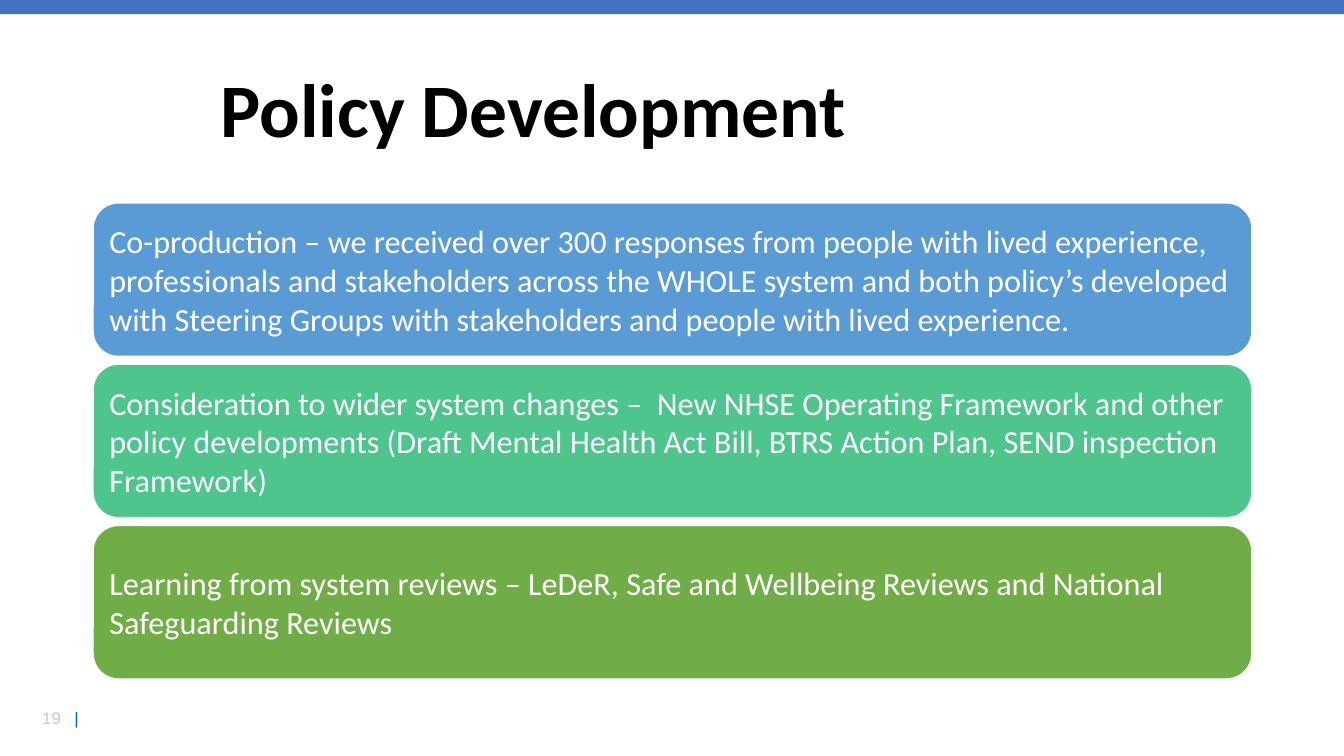
from lxml import etree
from pptx import Presentation
from pptx.dml.color import RGBColor
from pptx.enum.shapes import MSO_SHAPE as Shape
from pptx.enum.text import MSO_ANCHOR as Anchor, PP_ALIGN as Align
from pptx.oxml.ns import qn
from pptx.util import Inches, Pt

BLACK = RGBColor(0x00, 0x00, 0x00)
WHITE = RGBColor(0xFF, 0xFF, 0xFF)
GREY = RGBColor(0xC9, 0xC9, 0xC9)
DARK_BLUE = RGBColor(0x00, 0x5E, 0xB8)
BAR_BLUE = RGBColor(0x44, 0x72, 0xC4)
BLUE = RGBColor(0x5B, 0x9B, 0xD5)
TEAL = RGBColor(0x4D, 0xC5, 0x8D)
GREEN = RGBColor(0x70, 0xAD, 0x47)

SLIDE_WIDTH = 13.33
CARD_TOP, CARD_HEIGHT, CARD_STEP = 2.01, 1.53, 1.6

CARDS = [
    (BLUE, "Co-production – we received over 300 responses from people with lived "
           "experience, professionals and stakeholders across the WHOLE system and both "
           "policy’s developed with Steering Groups with stakeholders and people with "
           "lived experience."),
    (TEAL, "Consideration to wider system changes –  New NHSE Operating Framework and "
           "other policy developments (Draft Mental Health Act Bill, BTRS Action Plan, "
           "SEND inspection Framework)"),
    (GREEN, "Learning from system reviews – LeDeR, Safe and Wellbeing Reviews and "
            "National Safeguarding Reviews"),
]


def add_run(paragraph, text, size, color, font="Calibri", bold=False):
    run = paragraph.add_run()
    run.text = text
    run.font.name = font
    run.font.size = Pt(size)
    run.font.bold = bold
    run.font.color.rgb = color


def add_block(slide, kind, left, top, width, height, fill):
    shape = slide.shapes.add_shape(
        kind, Inches(left), Inches(top), Inches(width), Inches(height))
    shape.shadow.inherit = False
    shape.fill.solid()
    shape.fill.fore_color.rgb = fill
    return shape


def add_title(slide, text):
    title = slide.shapes.title
    title.left, title.top = Inches(2.09), Inches(0.4)
    title.width, title.height = Inches(10.32), Inches(1.45)
    title.text_frame.vertical_anchor = Anchor.MIDDLE
    paragraph = title.text_frame.paragraphs[0]
    paragraph.alignment = Align.LEFT
    paragraph.line_spacing = 0.9
    add_run(paragraph, text, 54, BLACK, bold=True)


def add_card(slide, top, fill, text):
    card = add_block(slide, Shape.ROUNDED_RECTANGLE, 0.92, top, 11.5, CARD_HEIGHT, fill)
    card.line.color.rgb = WHITE
    card.line.width = Pt(1.5)
    frame = card.text_frame
    frame.word_wrap = True
    frame.vertical_anchor = Anchor.MIDDLE
    frame.margin_left = frame.margin_right = Inches(0.09)
    frame.margin_top = frame.margin_bottom = Inches(0.09)
    paragraph = frame.paragraphs[0]
    paragraph.alignment = Align.LEFT
    add_run(paragraph, text, 23, WHITE)


def add_page_number(slide, number):
    """Page number with a vertical bar set off by a tab stop."""
    box = slide.shapes.add_textbox(Inches(0.32), Inches(6.97), Inches(0.71), Inches(0.3))
    box.text_frame.word_wrap = True
    paragraph = box.text_frame.paragraphs[0]
    properties = paragraph._p.get_or_add_pPr()
    tabs = etree.SubElement(properties, qn("a:tabLst"))
    etree.SubElement(tabs, qn("a:tab"), pos=str(Inches(0.32)), algn="l")
    add_run(paragraph, f"{number}\t", 12, GREY, "Arial")
    add_run(paragraph, "|", 12, DARK_BLUE, "Arial")


def main():
    presentation = Presentation()
    presentation.slide_width = Inches(SLIDE_WIDTH)
    presentation.slide_height = Inches(7.5)
    slide = presentation.slides.add_slide(presentation.slide_layouts[5])

    add_page_number(slide, 19)
    add_title(slide, "Policy Development")
    top_bar = add_block(slide, Shape.RECTANGLE, 0, 0, SLIDE_WIDTH, 0.14, BAR_BLUE)
    top_bar.line.fill.background()
    for index, (fill, text) in enumerate(CARDS):
        add_card(slide, CARD_TOP + index * CARD_STEP, fill, text)

    presentation.save("out.pptx")


if __name__ == "__main__":
    main()
